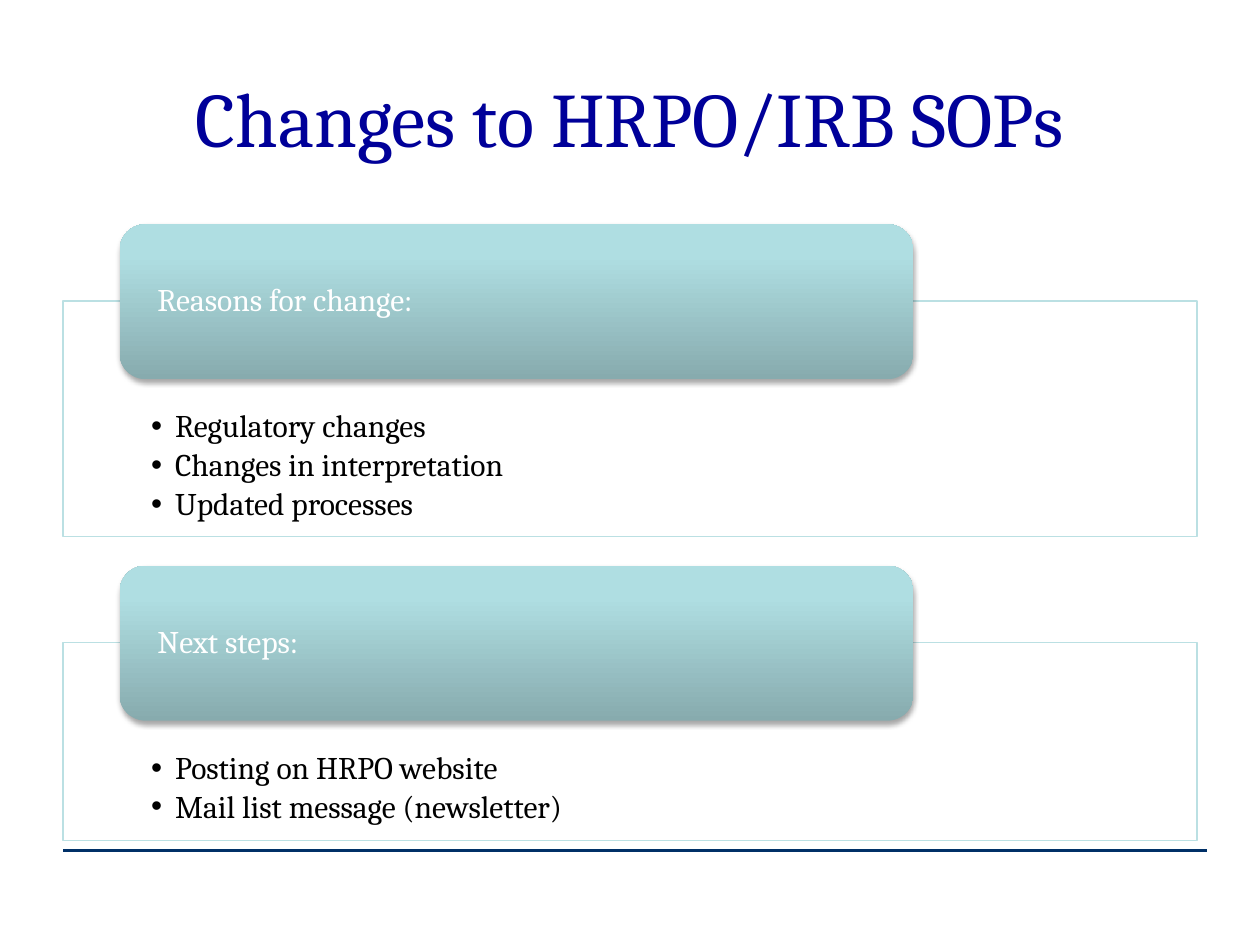
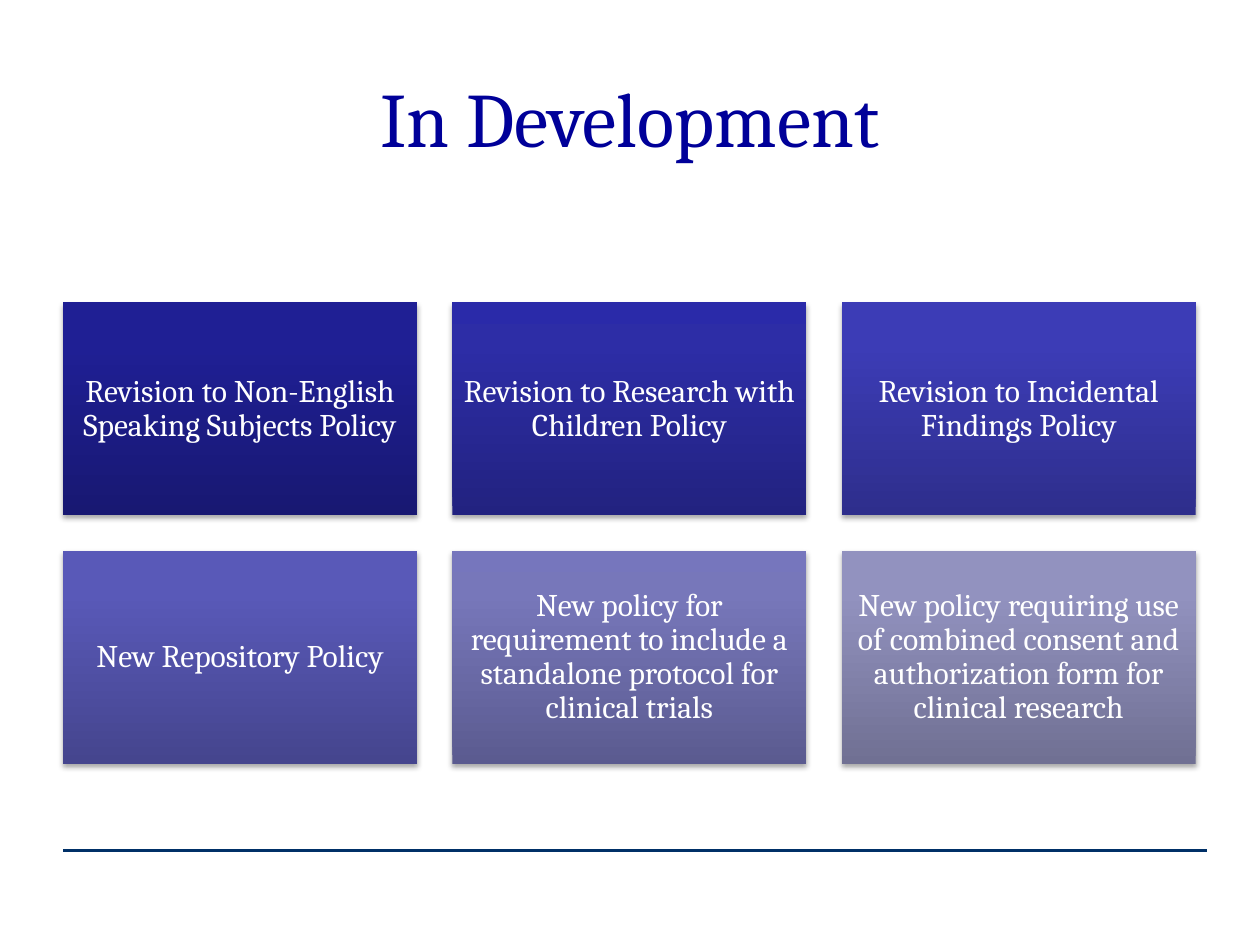
import dataclasses
import copy
import pptx
import pptx.util
from lxml import etree
from pptx.dml.color import RGBColor
from pptx.enum.shapes import MSO_CONNECTOR, MSO_SHAPE
from pptx.enum.text import MSO_ANCHOR, PP_ALIGN
from pptx.oxml.ns import qn
from pptx.shapes.autoshape import Shape
from pptx.slide import Slide
from pptx.text.text import TextFrame
from pptx.util import Inches, Pt


@dataclasses.dataclass(frozen=True)
class Theme:
    font: str = "Cambria"
    head: float = 44
    body: float = 18
    title: str = "000099"
    rule: str = "003067"
    edge: str = "BBE0E3"
    white: str = "FFFFFF"
    black: str = "000000"
    teal: tuple[str, ...] = ("87ABAE", "AFDEE2", "AFE0E4")


@dataclasses.dataclass(frozen=True)
class Box:
    left: float
    top: float
    width: float
    height: float


@dataclasses.dataclass(frozen=True)
class Group:
    top: float
    height: float
    label: str
    points: tuple[str, ...]


@dataclasses.dataclass(frozen=True)
class Tile:
    text: str
    shades: tuple[str, ...]


THEME = Theme()
LEFT = 0.5
GROUPS = (
    Group(2.39, 1.87, "Reasons for change:",
          ("Regulatory changes", "Changes in interpretation", "Updated processes")),
    Group(5.1, 1.57, "Next steps:",
          ("Posting on HRPO website", "Mail list message (newsletter)")),
)
TILES = (
    Tile("Revision to Non-English Speaking Subjects Policy", ("181872", "1F1F94", "1D1D97")),
    Tile("Revision to Research with Children Policy", ("222280", "2D2DA6", "2A2AA9")),
    Tile("Revision to Incidental Findings Policy", ("2E2E8C", "3C3CB6", "3A3AB9")),
    Tile("New Repository Policy", ("45458E", "5959B8", "5858BB")),
    Tile("New policy for requirement to include a standalone protocol for clinical trials",
         ("5B5B90", "7777BA", "7676BD")),
    Tile("New policy requiring use of combined consent and authorization form for "
         "clinical research", ("707093", "9292BF", "9191C0")),
)


def color(code: str) -> RGBColor:
    return RGBColor.from_string(code)


def place(box: Box) -> tuple[int, ...]:
    return tuple(Inches(n) for n in dataclasses.astuple(box))


def write(frame: TextFrame, lines: tuple[str, ...], size: float, ink: str,
          align: PP_ALIGN = PP_ALIGN.LEFT, anchor: MSO_ANCHOR = MSO_ANCHOR.MIDDLE,
          pad: tuple[float, float, float, float] = (0.1, 0.05, 0.1, 0.05),
          pitch: float = 0.9, bullet: bool = False) -> None:
    """Fill a frame with one paragraph per line; pad is left, top, right, bottom."""
    frame.word_wrap = True
    frame.vertical_anchor = anchor
    (frame.margin_left, frame.margin_top,
     frame.margin_right, frame.margin_bottom) = (Inches(n) for n in pad)
    for i, line in enumerate(lines):
        para = frame.add_paragraph() if i else frame.paragraphs[0]
        para.text = line
        para.alignment = align
        para.line_spacing = pitch
        if bullet:
            para.space_after = Pt(size * 0.15)
            props = para._p.get_or_add_pPr()
            props.set("marL", str(Inches(0.19)))
            props.set("indent", str(-Inches(0.19)))
            etree.SubElement(props, qn("a:buFont"), typeface="Arial")
            etree.SubElement(props, qn("a:buChar"), char="•")
        para.font.name = THEME.font
        para.font.size = Pt(size)
        para.font.color.rgb = color(ink)


def shade(shape: Shape, shades: tuple[str, ...]) -> None:
    """Give a shape a gradient rising from its foot and a soft shadow."""
    shape.line.fill.background()
    fill = shape.fill
    fill.gradient()
    fill.gradient_angle = 90
    stops = shape._element.spPr.find(qn("a:gradFill")).find(qn("a:gsLst"))
    stops.append(copy.deepcopy(stops[-1]))
    for stop, spot, code in zip(fill.gradient_stops, (0, 0.8, 1), shades):
        stop.position = spot
        stop.color.rgb = color(code)
    shape.shadow.inherit = False
    effects = shape._element.spPr.find(qn("a:effectLst"))
    shadow = etree.SubElement(effects, qn("a:outerShdw"), blurRad=str(Pt(3.1)),
                              dist=str(Pt(1.8)), dir="5400000", rotWithShape="0")
    tint = etree.SubElement(shadow, qn("a:srgbClr"), val=THEME.black)
    etree.SubElement(tint, qn("a:alpha"), val="35000")


def start(deck: pptx.presentation.Presentation, title: str) -> Slide:
    """Add a slide with the shared title and foot rule."""
    slide = deck.slides.add_slide(deck.slide_layouts[6])
    rule = slide.shapes.add_connector(MSO_CONNECTOR.STRAIGHT, Inches(LEFT), Inches(6.75),
                                      Inches(9.58), Inches(6.75))
    rule.line.color.rgb = color(THEME.rule)
    rule.line.width = Pt(2.25)
    etree.SubElement(rule._element.spPr, qn("a:effectLst"))
    head = slide.shapes.add_textbox(*place(Box(LEFT, 0.3, 9, 1.25)))
    write(head.text_frame, (title,), THEME.head, THEME.title, PP_ALIGN.CENTER, pitch=1.0)
    return slide


def draw_group(slide: Slide, group: Group) -> None:
    panel = slide.shapes.add_shape(MSO_SHAPE.RECTANGLE,
                                   *place(Box(LEFT, group.top, 9, group.height)))
    panel.shadow.inherit = False
    panel.fill.solid()
    panel.fill.fore_color.rgb = color(THEME.white)
    panel.line.color.rgb = color(THEME.edge)
    panel.line.width = Pt(0.75)
    write(panel.text_frame, group.points, THEME.body, THEME.black,
          anchor=MSO_ANCHOR.TOP, pad=(0.7, 0.87, 0.7, 0.14), bullet=True)
    tab = slide.shapes.add_shape(MSO_SHAPE.ROUNDED_RECTANGLE,
                                 *place(Box(0.95, group.top - 0.61, 6.3, 1.23)))
    shade(tab, THEME.teal)
    write(tab.text_frame, (group.label,), THEME.body, THEME.white, pad=(0.24, 0, 0.24, 0))


def draw_tiles(slide: Slide, tiles: tuple[Tile, ...]) -> None:
    wide, high, gap = 2.81, 1.69, 0.28
    for i, tile in enumerate(tiles):
        row, col = divmod(i, 3)
        box = Box(LEFT + col * (wide + gap), 2.4 + row * (high + gap), wide, high)
        shape = slide.shapes.add_shape(MSO_SHAPE.RECTANGLE, *place(box))
        shade(shape, tile.shades)
        write(shape.text_frame, (tile.text,), THEME.body, THEME.white, PP_ALIGN.CENTER,
              pad=(0.07, 0.07, 0.07, 0.07))


def main() -> None:
    deck = pptx.Presentation()
    deck.slide_width, deck.slide_height = Inches(10), Inches(7.5)
    slide = start(deck, "Changes to HRPO/IRB SOPs")
    for group in GROUPS:
        draw_group(slide, group)
    draw_tiles(start(deck, "In Development"), TILES)
    deck.save("out.pptx")


if __name__ == "__main__":
    main()
